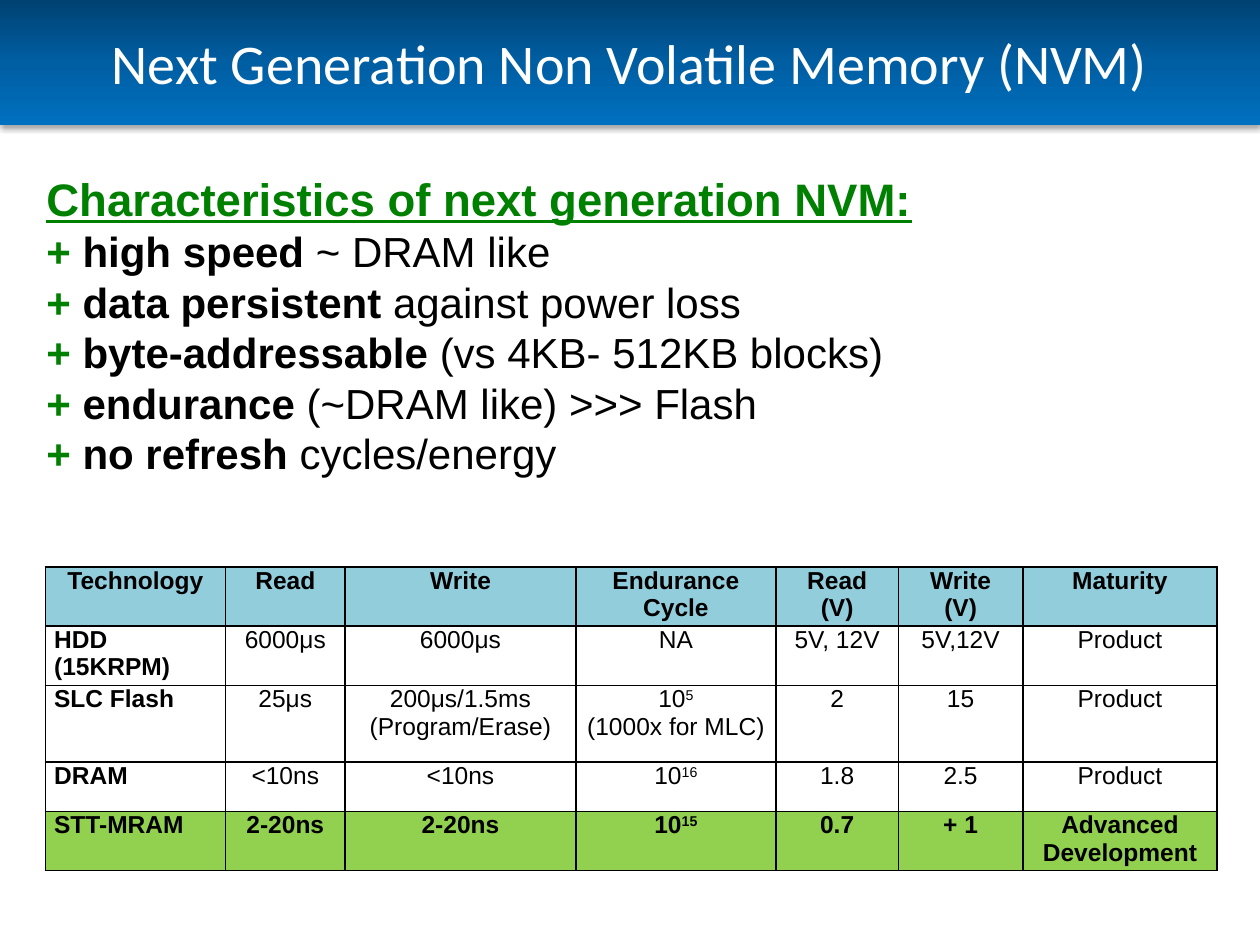
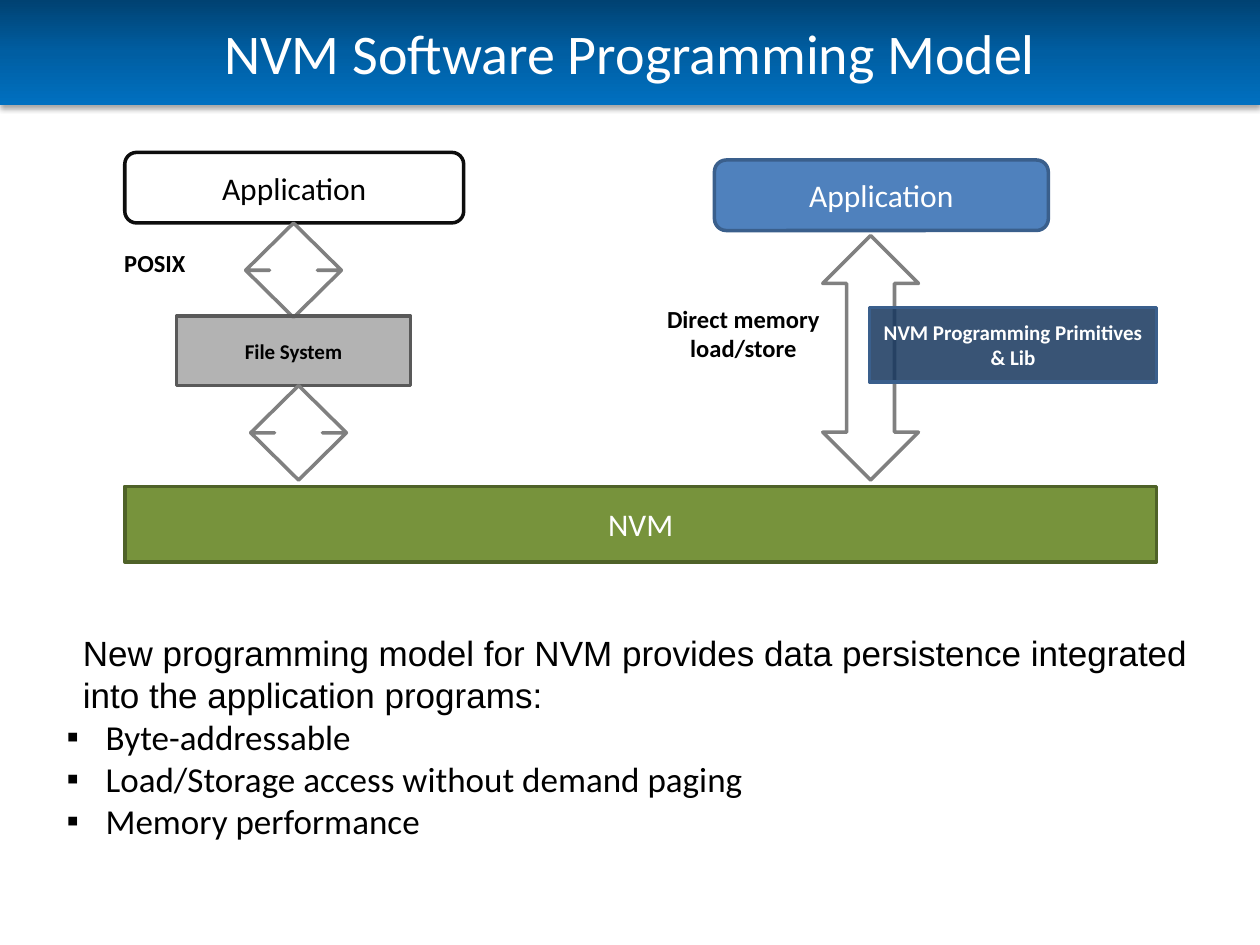
from lxml.etree import SubElement
from pptx import Presentation
from pptx.dml.color import RGBColor
from pptx.enum.shapes import MSO_SHAPE
from pptx.enum.text import MSO_ANCHOR, MSO_AUTO_SIZE, PP_ALIGN
from pptx.oxml import parse_xml
from pptx.oxml.ns import nsdecls, qn
from pptx.util import Inches, Pt

COLORS = {
    "black": "000000", "white": "FFFFFF", "green": "008000",
    "band top": "004272", "band middle": "005EA2", "band bottom": "0070C0",
    "table header": "92CDDC", "table highlight": "92D050",
    "outline": "0D0D0D", "blue": "4F81BD", "blue edge": "3A5F8C", "navy": "17375E",
    "arrow edge": "808080", "gray": "A6A6A6", "gray edge": "595959",
    "olive": "77933C", "olive edge": "4F6228",
}

presentation = Presentation()
presentation.slide_width, presentation.slide_height = Inches(10), Inches(7.5)
# Grid of 100 columns by 75 rows
COLUMN = presentation.slide_width / 100
ROW = presentation.slide_height / 75


def place(left, top, width, height):
    return [int(left * COLUMN), int(top * ROW), int(width * COLUMN), int(height * ROW)]


def write(frame, paragraphs, style, align=PP_ALIGN.LEFT):
    """Fill a frame; a paragraph is a string or a list of (text, changes) runs."""
    frame.word_wrap = True
    for index, runs in enumerate(paragraphs):
        paragraph = frame.paragraphs[0] if index == 0 else frame.add_paragraph()
        paragraph.alignment = align
        for text, changes in [(runs, {})] if isinstance(runs, str) else runs:
            run = paragraph.add_run()
            run.text = text
            values = {**style, **changes}
            run.font.color.rgb = RGBColor.from_string(COLORS[values.pop("color")])
            if values.pop("raised", False):
                run.font._element.set("baseline", "30000")
            for name, value in values.items():
                setattr(run.font, name, value)


# Shared title bands
TITLES = [("Next Generation Non Volatile Memory (NVM)", 9.9),
          ("NVM Software Programming Model", 8.3)]
TITLE_STYLE = {"name": "Calibri", "size": Pt(32), "color": "white"}
STOPS = "".join(
    f'<a:gs pos="{position}"><a:srgbClr val="{COLORS[name]}"/></a:gs>'
    for position, name in [(0, "band top"), (50000, "band middle"), (100000, "band bottom")])
BAND_XML = [
    f'<a:gradFill {nsdecls("a")} rotWithShape="1"><a:gsLst>{STOPS}</a:gsLst>'
    '<a:lin ang="5400000" scaled="0"/></a:gradFill>',
    f'<a:effectLst {nsdecls("a")}><a:outerShdw blurRad="39370" dist="22860" dir="5400000" '
    f'rotWithShape="0"><a:srgbClr val="{COLORS["black"]}"><a:alpha val="35000"/>'
    '</a:srgbClr></a:outerShdw></a:effectLst>',
]
for title_text, band_height in TITLES:
    slide = presentation.slides.add_slide(presentation.slide_layouts[5])
    title = slide.shapes.title
    title.left, title.top, title.width, title.height = place(0, 0, 100, band_height)
    for xml in BAND_XML:
        title._element.spPr.append(parse_xml(xml))
    title.text_frame.auto_size = MSO_AUTO_SIZE.NONE
    title.text_frame.vertical_anchor = MSO_ANCHOR.MIDDLE
    write(title.text_frame, [title_text], TITLE_STYLE, PP_ALIGN.CENTER)
memory_slide, model_slide = presentation.slides

# Slide 1: characteristics
GREEN = {"color": "green", "bold": True}
BOLD = {"bold": True}
characteristics = [
    ("high speed", "~ DRAM like"),
    ("data persistent", "against power loss"),
    ("byte-addressable", "(vs 4KB- 512KB blocks)"),
    ("endurance", "(~DRAM like) >>> Flash"),
    ("no refresh", "cycles/energy"),
]
lines = [[("Characteristics of next generation NVM:",
           {**GREEN, "size": Pt(26), "underline": True})]]
lines += [[("+ ", GREEN), (strength + " ", BOLD), (detail, {})]
          for strength, detail in characteristics]
text_box = memory_slide.shapes.add_textbox(*place(2.7, 13.1, 87.4, 28.5))
write(text_box.text_frame, lines, {"name": "Arial", "size": Pt(24), "color": "black"})

# Slide 1: technology table; "|" parts paragraphs, "^" starts an exponent
column_widths = [14.3, 9.5, 18.3, 15.9, 9.7, 9.9, 15.4]
row_heights = [4.7, 4.7, 6.1, 3.9, 4.7]
records = [
    ["Technology", "Read", "Write", "Endurance Cycle", "Read|(V)", "Write|(V)", "Maturity"],
    ["HDD|(15KRPM)", "6000μs", "6000μs", "NA", "5V, 12V", "5V,12V", "Product"],
    ["SLC Flash", "25μs", "200μs/1.5ms|(Program/Erase)", "10^5|(1000x for MLC)", "2", "15",
     "Product"],
    ["DRAM", "<10ns", "<10ns", "10^16", "1.8", "2.5", "Product"],
    ["STT-MRAM", "2-20ns", "2-20ns", "10^15", "0.7", "+ 1", "Advanced Development"],
]
row_fills = {0: "table header", len(records) - 1: "table highlight"}
table = memory_slide.shapes.add_table(
    len(records), len(column_widths),
    *place(3.6, 45, sum(column_widths), sum(row_heights))).table
table.first_row = table.horz_banding = False
for column, width in zip(table.columns, column_widths):
    column.width = int(width * COLUMN)
for row_index, (row, height, record) in enumerate(zip(table.rows, row_heights, records)):
    row.height = int(height * ROW)
    for column_index, (cell, text) in enumerate(zip(row.cells, record)):
        cell.margin_left = cell.margin_right = Inches(0.07)
        cell.margin_top = cell.margin_bottom = 0
        for side in ("lnL", "lnR", "lnT", "lnB"):
            border = SubElement(cell._tc.get_or_add_tcPr(), qn(f"a:{side}"), w=str(Pt(1)))
            border_fill = SubElement(border, qn("a:solidFill"))
            SubElement(border_fill, qn("a:srgbClr"), val=COLORS["black"])
        if row_index in row_fills:
            cell.fill.solid()
            cell.fill.fore_color.rgb = RGBColor.from_string(COLORS[row_fills[row_index]])
        else:
            cell.fill.background()
        paragraphs = [[(part, {"raised": index > 0}) for index, part in enumerate(line.split("^"))]
                      for line in text.split("|")]
        first_column = column_index == 0
        style = {"name": "Arial", "size": Pt(14), "color": "black",
                 "bold": row_index in row_fills or first_column}
        justified = first_column and row_index > 0
        write(cell.text_frame, paragraphs, style,
              PP_ALIGN.JUSTIFY if justified else PP_ALIGN.CENTER)

# Slide 2: layers and arrows, from back to front
ROUNDED, BLOCK, ARROW = (MSO_SHAPE.ROUNDED_RECTANGLE, MSO_SHAPE.RECTANGLE,
                         MSO_SHAPE.UP_DOWN_ARROW)
LAYER = {"name": "Calibri", "size": Pt(18)}
PART = {"name": "Calibri", "size": Pt(12), "bold": True}
diagram = [
    (ROUNDED, (9.9, 12.1, 26.9, 5.6), "white", "outline", "Application", LAYER, "black"),
    (ROUNDED, (56.7, 12.7, 26.5, 5.6), "blue", "blue edge", "Application", LAYER, "white"),
    (ARROW, (65.3, 18.7, 7.6, 19.4), "white", "arrow edge", "", LAYER, "black"),
    (BLOCK, (69, 24.4, 22.8, 5.9), "navy", "blue edge",
     "NVM Programming Primitives & Lib", PART, "white"),
    (ARROW, (19.5, 17.7, 7.6, 7.5), "white", "arrow edge", "", LAYER, "black"),
    (BLOCK, (14, 25.1, 18.6, 5.5), "gray", "gray edge", "File System", PART, "black"),
    (BLOCK, (9.9, 38.6, 81.9, 6), "olive", "olive edge", "NVM", LAYER, "white"),
    (ARROW, (19.9, 30.6, 7.6, 7.5), "white", "arrow edge", "", LAYER, "black"),
]
for kind, position, fill, edge, text, style, color in diagram:
    shape = model_slide.shapes.add_shape(kind, *place(*position))
    shape.shadow.inherit = False
    shape.fill.solid()
    shape.fill.fore_color.rgb = RGBColor.from_string(COLORS[fill])
    shape.line.color.rgb = RGBColor.from_string(COLORS[edge])
    shape.line.width = Pt(2)
    if style is PART:
        fill_color = shape._element.spPr.find(qn("a:solidFill"))[0]
        SubElement(fill_color, qn("a:alpha"), val="85000")
    if text:
        shape.text_frame.vertical_anchor = MSO_ANCHOR.MIDDLE
        write(shape.text_frame, [text], {**style, "color": color}, PP_ALIGN.CENTER)

# Slide 2: access labels
for position, label_lines in [((50.8, 23.6, 16.4, 7.5), ["Direct memory", "load/store"]),
                              ((4.1, 19.2, 16.4, 3.1), ["POSIX"])]:
    label = model_slide.shapes.add_textbox(*place(*position))
    write(label.text_frame, label_lines, {**PART, "size": Pt(14), "color": "black"},
          PP_ALIGN.CENTER)

# Slide 2: summary with bullets
summary = model_slide.shapes.add_textbox(*place(4.3, 49.6, 93.3, 17.8))
write(summary.text_frame, [
    [("New programming model for NVM provides data persistence integrated "
      "into the application programs:", {"name": "Arial"})],
    "Byte-addressable",
    "Load/Storage access without demand paging",
    "Memory performance",
], {"name": "Calibri", "size": Pt(20), "color": "black"})
introduction, *points = summary.text_frame.paragraphs
introduction._p.get_or_add_pPr().set("marL", str(Inches(0.13)))
for point in points:
    properties = point._p.get_or_add_pPr()
    properties.set("marL", str(Inches(0.31)))
    properties.set("indent", str(-Inches(0.31)))
    SubElement(properties, qn("a:buFont"), typeface="Arial")
    SubElement(properties, qn("a:buChar"), char="▪")

presentation.save("out.pptx")
